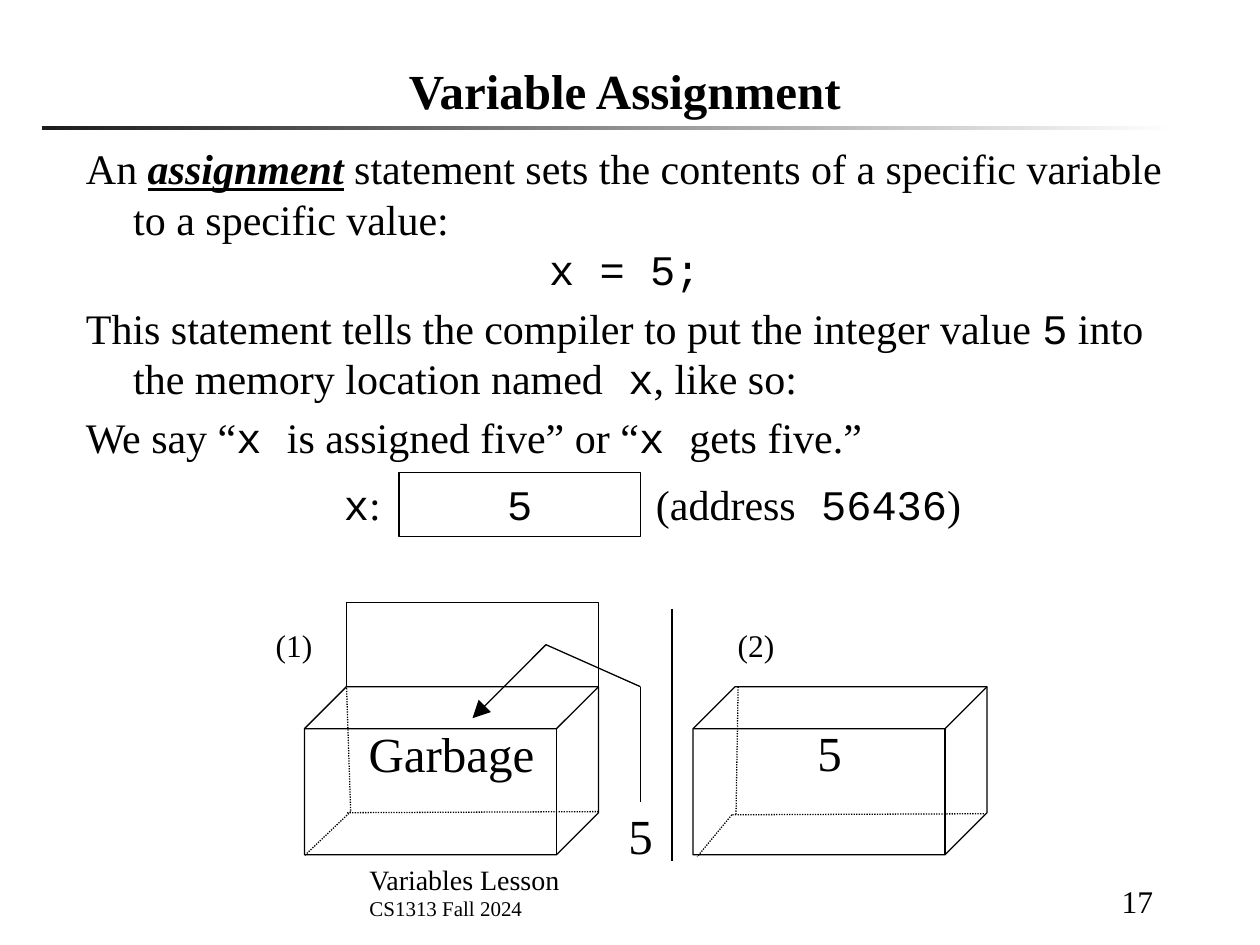
from itertools import pairwise

from pptx import Presentation
from pptx.dml.color import RGBColor
from pptx.enum.dml import MSO_LINE
from pptx.enum.shapes import MSO_CONNECTOR, MSO_SHAPE
from pptx.enum.text import MSO_ANCHOR, PP_ALIGN
from pptx.oxml.ns import qn
from pptx.util import Pt
from lxml.etree import SubElement

PX = 7620
SERIF, MONO = "Times New Roman", "Courier New"
BLACK = "000000"


def px(*values):
    """Turn lengths in px into EMU."""
    return [v * PX for v in values]


def rgb(code):
    """Turn a hex string into a colour."""
    return RGBColor.from_string(code)


def style(font, size, name=SERIF):
    """Set size, family and black colour of a font."""
    font.size, font.name = Pt(size), name
    font.color.rgb = rgb(BLACK)


def write(p, runs, size, align=PP_ALIGN.LEFT):
    """Fill a paragraph with (text, family) runs."""
    p.alignment = align
    style(p.font, size, runs[0][1])
    for text, name in runs:
        r = p.add_run()
        r.text = text
        if name != runs[0][1]:
            r.font.name = name


def add_text(s, box, paragraphs, align=PP_ALIGN.LEFT, anchor=MSO_ANCHOR.TOP, wrap=True):
    """Add a text box of (runs, size) paragraphs."""
    tf = s.shapes.add_textbox(*px(*box)).text_frame
    tf.word_wrap, tf.vertical_anchor = wrap, anchor
    for i, (runs, size) in enumerate(paragraphs):
        p = tf.add_paragraph() if i else tf.paragraphs[0]
        write(p, runs, size, align)
    return tf


def add_label(s, box, runs, size):
    """Add a centred one-line label."""
    add_text(s, box, [(runs, size)], PP_ALIGN.CENTER, wrap=False)


def add_outline(s, kind, box):
    """Add an unfilled shape with a thin black outline."""
    sp = s.shapes.add_shape(kind, *px(*box))
    sp.shadow.inherit = False
    sp.fill.background()
    sp.line.color.rgb = rgb(BLACK)
    sp.line.width = Pt(0.75)


def add_path(s, points, dotted=False, arrow=False):
    """Join points with straight lines, optionally ending in an arrowhead."""
    for start, end in pairwise(points):
        line = s.shapes.add_connector(MSO_CONNECTOR.STRAIGHT, *px(*start, *end))
        line.line.color.rgb = rgb(BLACK)
        line.line.width = Pt(0.75)
        if dotted:
            line.line.dash_style = MSO_LINE.ROUND_DOT
        if arrow and end == points[-1]:
            SubElement(line.line._get_or_add_ln(), qn("a:tailEnd"),
                       type="triangle", w="lg", len="lg")
        SubElement(line._element.spPr, qn("a:effectLst"))


def add_title(s, text):
    """Place the title and the fading rule under it."""
    rule = s.shapes.add_shape(MSO_SHAPE.RECTANGLE, *px(40, 120, 1080, 4))
    rule.shadow.inherit = False
    rule.line.fill.background()
    rule.fill.gradient()
    rule.fill.gradient_angle = 0
    for stop, code in zip(rule.fill.gradient_stops, ("1C1C1C", "FFFFFF")):
        stop.color.rgb = rgb(code)
    title = s.shapes.title
    title.left, title.top, title.width, title.height = px(70, 50, 1050, 70)
    tf = title.text_frame
    tf.text, tf.vertical_anchor = text, MSO_ANCHOR.BOTTOM
    p = tf.paragraphs[0]
    p.alignment = PP_ALIGN.CENTER
    style(p.font, 28)
    p.font.bold = True


def add_body(s):
    """Add the explanation with hanging indents."""
    paragraphs = [
        [("An ", SERIF), ("assignment", SERIF),
         (" statement sets the contents of a specific variable to a specific value:", SERIF)],
        [("x = 5;", MONO)],
        [("This statement tells the compiler to put the integer value ", SERIF), ("5", MONO),
         (" into the memory location named", SERIF), (" x", MONO), (", like so:", SERIF)],
        [("We say “", SERIF), ("x ", MONO), ("is assigned five” or “", SERIF),
         ("x ", MONO), ("gets five.”", SERIF)],
    ]
    tf = add_text(s, (70, 130, 1050, 320), [(runs, 24) for runs in paragraphs])
    for p, before in zip(tf.paragraphs, (0, 0, 4.8, 4.8)):
        p.space_before = Pt(before)
        pPr = p._p.get_or_add_pPr()
        pPr.set("marL", str(45 * PX))
        pPr.set("indent", str(-45 * PX))
    first, code = tf.paragraphs[:2]
    code.alignment = PP_ALIGN.CENTER
    term = first.runs[1].font
    term.bold = term.italic = term.underline = True


def add_memory_cell(s):
    """Draw the named variable with its value and address."""
    add_outline(s, MSO_SHAPE.RECTANGLE, (380, 450, 230, 61))
    add_label(s, (380, 450, 230, 61), [("5", MONO)], 24)
    add_label(s, (310, 450, 70, 60), [("x", MONO), (":", SERIF)], 24)
    add_label(s, (610, 450, 320, 60),
              [("(address", SERIF), (" 56436", MONO), (")", SERIF)], 24)


def add_boxes(s):
    """Draw the open box being filled and the box afterwards."""
    for left in (290, 660):
        add_outline(s, MSO_SHAPE.CUBE, (left, 654, 280, 160))
    add_outline(s, MSO_SHAPE.RECTANGLE, (330, 574, 240, 80))
    add_path(s, [(640, 580), (640, 820)])
    add_path(s, [(610, 764), (610, 654), (520, 614), (450, 684)], arrow=True)
    for points in (
        [(330, 653), (334, 773), (290, 815)],
        [(570, 773), (330, 774)],
        [(703, 654), (701, 776)],
        [(937, 775), (697, 776), (664, 816)],
    ):
        add_path(s, points, dotted=True)
    for text, box, size in (
        ("(1)", (250, 590, 60, 48), 18),
        ("(2)", (690, 590, 60, 48), 18),
        ("Garbage", (320, 683, 220, 68), 28),
        ("5", (570, 761, 80, 68), 28),
        ("5", (750, 682, 80, 68), 28),
    ):
        add_label(s, box, [(text, SERIF)], size)


def add_footer(s):
    """Add the lesson name and the page number."""
    add_text(s, (340, 823, 580, 60),
             [([("Variables Lesson", SERIF)], 16), ([("CS1313 Fall 2024", SERIF)], 12)],
             anchor=MSO_ANCHOR.BOTTOM)
    add_text(s, (940, 822, 170, 60), [([("17", SERIF)], 18)],
             PP_ALIGN.RIGHT, MSO_ANCHOR.BOTTOM)


def main():
    """Build and save the slide."""
    prs = Presentation()
    prs.slide_width, prs.slide_height = px(1200, 900)
    s = prs.slides.add_slide(prs.slide_layouts[5])
    add_title(s, "Variable Assignment")
    add_body(s)
    add_memory_cell(s)
    add_boxes(s)
    add_footer(s)
    prs.save("out.pptx")


if __name__ == "__main__":
    main()
